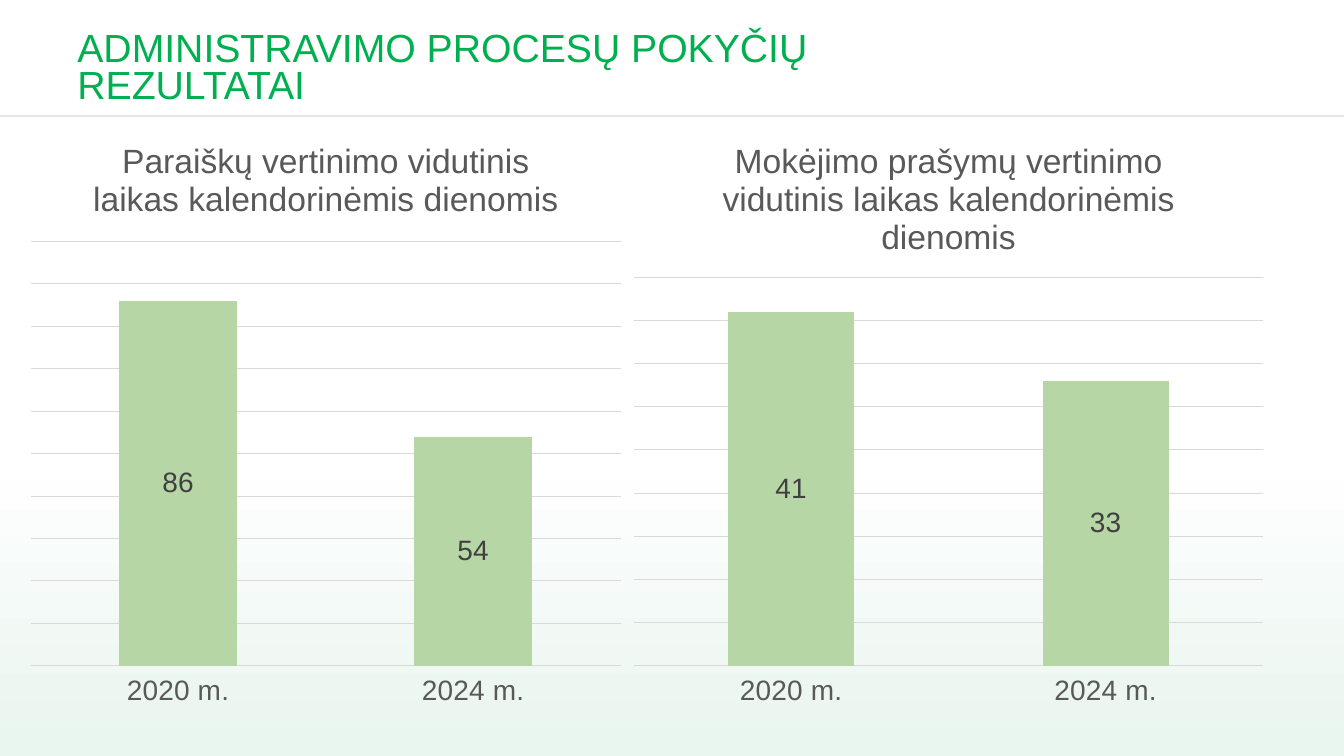
from dataclasses import dataclass

from lxml.etree import SubElement
from pptx import Presentation
from pptx.chart.chart import Chart
from pptx.chart.data import CategoryChartData
from pptx.dml.color import RGBColor
from pptx.enum.chart import XL_CHART_TYPE, XL_LABEL_POSITION, XL_TICK_LABEL_POSITION, XL_TICK_MARK
from pptx.enum.shapes import MSO_CONNECTOR, MSO_SHAPE
from pptx.enum.text import MSO_ANCHOR, PP_ALIGN
from pptx.oxml.ns import qn
from pptx.slide import Slide
from pptx.text.text import Font, TextFrame
from pptx.util import Pt

FONT = "Arial"
WIDTH, HEIGHT = 960, 540
HEADER_BOTTOM = 82.8
CHART_HEIGHT = 427
YEARS = ("2020 m.", "2024 m.")


@dataclass(frozen=True)
class DurationChart:
    heading: str
    days: tuple[int, int]
    left: float
    width: float
    axis_top: int
    axis_step: int
    plot_top: float
    plot_height: float


DURATIONS = (
    DurationChart("Paraiškų vertinimo vidutinis laikas kalendorinėmis dienomis",
                  (86, 54), 13, 439.2, 100, 10, 0.21, 0.71),
    DurationChart("Mokėjimo prašymų vertinimo vidutinis laikas kalendorinėmis dienomis",
                  (41, 33), 443.5, 468, 45, 5, 0.27, 0.65),
)


def color(value: str) -> RGBColor:
    return RGBColor.from_string(value)


def style_font(font: Font, size: float, shade: str) -> None:
    font.name = FONT
    font.size = Pt(size)
    font.bold = False
    font.color.rgb = color(shade)


def write_text(frame: TextFrame, text: str, *, size: float, shade: str,
               align: PP_ALIGN = PP_ALIGN.LEFT, spacing: float = 1.0) -> None:
    paragraph = frame.paragraphs[0]
    paragraph.alignment = align
    paragraph.line_spacing = spacing
    run = paragraph.add_run()
    run.text = text
    style_font(run.font, size, shade)


def place_plot(chart: Chart, top: float, height: float) -> None:
    plot_area = chart.element.find(".//" + qn("c:plotArea"))
    for automatic in plot_area.findall(qn("c:layout")):
        plot_area.remove(automatic)
    layout = SubElement(plot_area, qn("c:layout"))
    plot_area.insert(0, layout)
    manual = SubElement(layout, qn("c:manualLayout"))
    settings = {"layoutTarget": "inner", "xMode": "edge", "yMode": "edge",
                "x": 0.02, "y": top, "w": 0.96, "h": height}
    for tag, value in settings.items():
        SubElement(manual, qn(f"c:{tag}")).set("val", str(value))


def draw_backdrop(slide: Slide) -> None:
    slide.background.fill.solid()
    slide.background.fill.fore_color.rgb = color("A6B727")
    backdrop = slide.shapes.add_shape(MSO_SHAPE.RECTANGLE, 0, 0, Pt(WIDTH), Pt(HEIGHT))
    backdrop.shadow.inherit = False
    backdrop.line.fill.background()
    backdrop.fill.gradient()
    backdrop.fill.gradient_angle = 90
    for stop, (position, shade) in zip(backdrop.fill.gradient_stops,
                                       ((0, "E9F5EF"), (0.4, "FFFFFF"))):
        stop.position = position
        stop.color.rgb = color(shade)


def draw_header(slide: Slide) -> None:
    rule = slide.shapes.add_connector(MSO_CONNECTOR.STRAIGHT, 0, Pt(HEADER_BOTTOM),
                                      Pt(WIDTH), Pt(HEADER_BOTTOM))
    rule.line.color.rgb = color("E6E6E6")
    rule.line.width = Pt(1)
    SubElement(rule.element.spPr, qn("a:effectLst"))

    heading = slide.shapes.add_textbox(Pt(48.2), Pt(16.6), Pt(673.2), Pt(66.2)).text_frame
    heading.word_wrap = True
    heading.vertical_anchor = MSO_ANCHOR.MIDDLE
    write_text(heading, "ADMINISTRAVIMO PROCESŲ POKYČIŲ REZULTATAI",
               size=28, shade="00B050", spacing=0.8)


def draw_duration(slide: Slide, duration: DurationChart) -> None:
    table = CategoryChartData()
    table.categories = YEARS
    table.add_series(duration.heading, duration.days)
    chart = slide.shapes.add_chart(
        XL_CHART_TYPE.COLUMN_STACKED, Pt(duration.left), Pt(HEADER_BOTTOM),
        Pt(duration.width), Pt(CHART_HEIGHT), table).chart
    style_font(chart.font, 20, "000000")
    chart.has_legend = False
    chart.has_title = True
    chart.chart_title.include_in_layout = False
    write_text(chart.chart_title.text_frame, duration.heading,
               size=24, shade="595959", align=PP_ALIGN.CENTER)

    years = chart.category_axis
    years.major_tick_mark = XL_TICK_MARK.NONE
    years.minor_tick_mark = XL_TICK_MARK.NONE
    years.tick_label_position = XL_TICK_LABEL_POSITION.LOW
    years.format.line.fill.background()
    style_font(years.tick_labels.font, 20, "595959")

    days = chart.value_axis
    days.visible = False
    days.minimum_scale = 0
    days.maximum_scale = duration.axis_top
    days.major_unit = duration.axis_step
    days.has_major_gridlines = True
    days.major_gridlines.format.line.color.rgb = color("D9D9D9")
    days.major_gridlines.format.line.width = Pt(0.75)

    columns = chart.plots[0]
    columns.gap_width = 150
    columns.overlap = 100
    columns.vary_by_categories = False
    fill = columns.series[0].format.fill
    fill.solid()
    fill.fore_color.rgb = color("B7D6A6")
    labels = columns.series[0].data_labels
    labels.show_value = True
    labels.position = XL_LABEL_POSITION.CENTER
    style_font(labels.font, 20, "404040")
    place_plot(chart, duration.plot_top, duration.plot_height)


def main() -> None:
    presentation = Presentation()
    presentation.slide_width = Pt(WIDTH)
    presentation.slide_height = Pt(HEIGHT)
    slide = presentation.slides.add_slide(presentation.slide_layouts[6])
    draw_backdrop(slide)
    draw_header(slide)
    for duration in DURATIONS:
        draw_duration(slide, duration)
    presentation.save("out.pptx")


if __name__ == "__main__":
    main()
